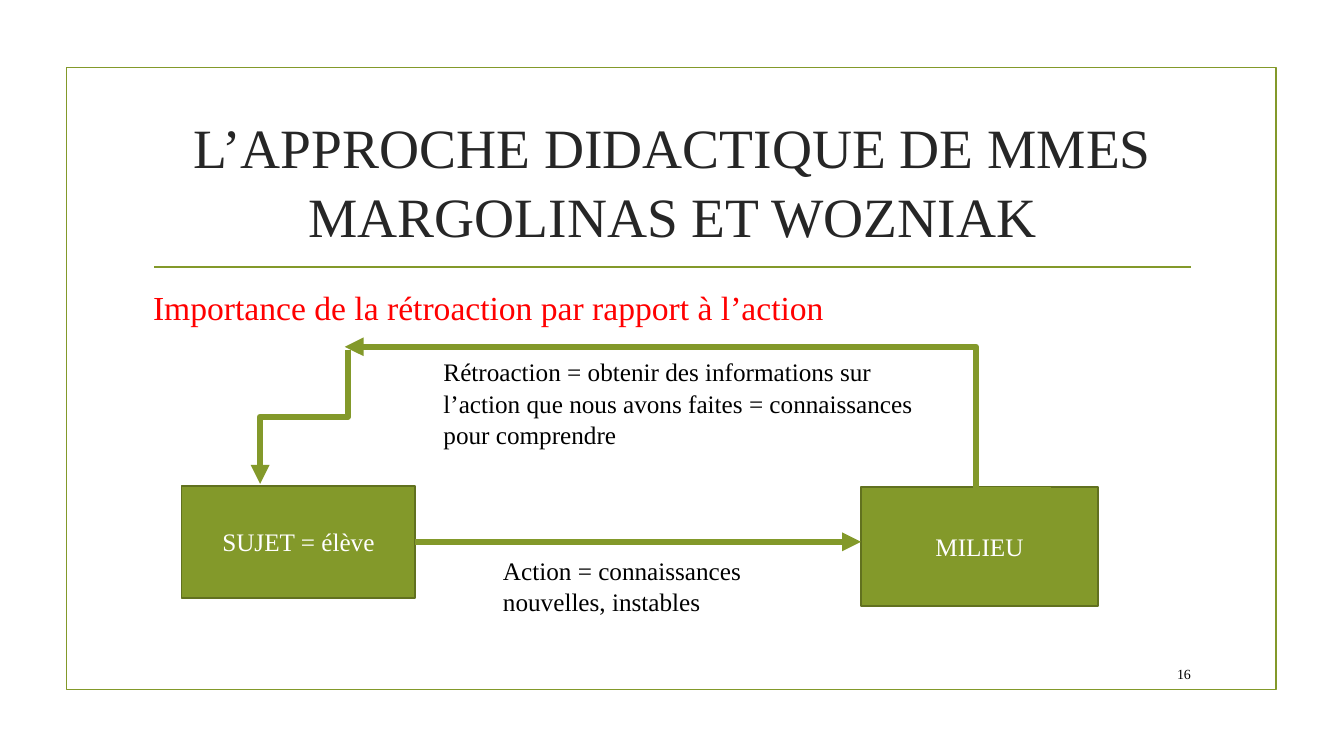
from dataclasses import dataclass

from lxml import etree
from pptx import Presentation
from pptx.dml.color import RGBColor as RGB
from pptx.enum.shapes import MSO_CONNECTOR as CONN, MSO_SHAPE as SHAPE
from pptx.enum.text import MSO_ANCHOR as ANCHOR, PP_ALIGN as ALIGN
from pptx.oxml.ns import qn
from pptx.util import Inches, Pt


@dataclass(frozen=True)
class Theme:
    font: str = "Times New Roman"
    green: RGB = RGB(0x83, 0x99, 0x2A)
    edge: RGB = RGB(0x61, 0x71, 0x1F)
    dark: RGB = RGB(0x26, 0x26, 0x26)
    red: RGB = RGB(0xFF, 0, 0)
    black: RGB = RGB(0, 0, 0)
    white: RGB = RGB(0xFF, 0xFF, 0xFF)
    title: float = 39.6
    lead: float = 24
    label: float = 18
    number: float = 10
    thin: float = 1.25
    thick: float = 4.5


T = Theme()


def set_attrs(obj, values):
    for name, value in values.items():
        setattr(obj, name, value)


def write(sp, text, size, color, align=ALIGN.LEFT, anchor=ANCHOR.TOP, spacing=1):
    tf = sp.text_frame
    set_attrs(tf, {"word_wrap": True, "vertical_anchor": anchor})
    p = tf.paragraphs[0]
    set_attrs(p, {"alignment": align, "line_spacing": spacing})
    r = p.add_run()
    r.text = text
    set_attrs(r.font, {"name": T.font, "size": Pt(size)})
    r.font.color.rgb = color


def add_text(s, box, *args, **kwargs):
    sp = s.shapes.add_textbox(*map(Inches, box))
    write(sp, *args, **kwargs)


def add_box(s, box, line, fill=None):
    sp = s.shapes.add_shape(SHAPE.RECTANGLE, *map(Inches, box))
    sp.shadow.inherit = False
    if fill is None:
        sp.fill.background()
    else:
        sp.fill.solid()
        sp.fill.fore_color.rgb = fill
    sp.line.color.rgb = line
    sp.line.width = Pt(T.thin)
    return sp


def add_line(s, kind, start, end, width, arrow=False, turn=0, bend=None):
    cx = s.shapes.add_connector(kind, *map(Inches, (*start, *end)))
    cx.line.color.rgb = T.green
    cx.line.width = Pt(width)
    pr = cx._element.spPr
    if arrow:
        etree.SubElement(cx.line._get_or_add_ln(), qn("a:tailEnd"), type="triangle")
    etree.SubElement(pr, qn("a:effectLst"))
    if turn:
        pr.find(qn("a:xfrm")).set("rot", str(turn * 60000))
    if bend is not None:
        guides = pr.find(qn("a:prstGeom")).find(qn("a:avLst"))
        etree.SubElement(guides, qn("a:gd"), name="adj1", fmla=f"val {round(bend * 100000)}")
    return cx


def add_frame(s, box):
    x, y, w, h = box
    add_box(s, box, T.green)
    add_line(s, CONN.STRAIGHT, (x + 0.87, y + 1.98), (x + w - 0.85, y + 1.98), T.thin)
    add_text(s, (x + w - 1.34, y + h - 0.31, 0.59, 0.31), "16", T.number, T.black,
             align=ALIGN.RIGHT, anchor=ANCHOR.MIDDLE)


def add_heading(s, box):
    x, y, w, h = box
    add_text(s, box, "L’APPROCHE DIDACTIQUE DE MMES MARGOLINAS ET WOZNIAK", T.title, T.dark,
             align=ALIGN.CENTER, anchor=ANCHOR.MIDDLE, spacing=1.03)
    add_text(s, (x, y + 1.73, w, 0.5), "Importance de la rétroaction par rapport à l’action",
             T.lead, T.red)


def add_actor(s, box, name):
    sp = add_box(s, box, T.edge, T.green)
    write(sp, name, T.label, T.white, align=ALIGN.CENTER, anchor=ANCHOR.MIDDLE)
    return sp


def add_loop(s, box):
    x, y, w, h = box
    subject = add_actor(s, (x, y + 1.38, 2.32, 1.11), "SUJET = élève")
    add_actor(s, (x + w - 2.35, y + 1.39, 2.35, 1.18), "MILIEU")

    add_line(s, CONN.ELBOW, (x + 8.62, y + 1.42), (x + 1.62, y), T.thick,
             arrow=True, bend=0.106)
    add_line(s, CONN.ELBOW, (x + 0.55, y + 0.26), (x + 1.88, y + 1.13), T.thick,
             arrow=True, turn=90)
    add_text(s, (x + 2.5, y + 0.03, 4.99, 1.01),
             "Rétroaction = obtenir des informations sur l’action que nous avons faites"
             " = connaissances pour comprendre", T.label, T.black, spacing=1.05)

    action_y = y + 1.38 + 1.11 / 2
    action = add_line(s, CONN.STRAIGHT, (x + 2.32, action_y), (x + w - 2.35, action_y),
                      T.thick, arrow=True)
    action.begin_connect(subject, 3)
    add_text(s, (x + 3.09, y + 2, 2.89, 0.71),
             "Action = connaissances nouvelles, instables", T.label, T.black, spacing=1.05)


def main():
    prs = Presentation()
    set_attrs(prs, {"slide_width": Inches(13.33), "slide_height": Inches(7.5)})
    s = prs.slides.add_slide(prs.slide_layouts[6])
    add_frame(s, (0.66, 0.67, 12, 6.17))
    add_heading(s, (1.42, 1.07, 10.5, 1.43))
    add_loop(s, (1.8, 3.44, 9.09, 2.71))
    prs.save("out.pptx")


if __name__ == "__main__":
    main()
